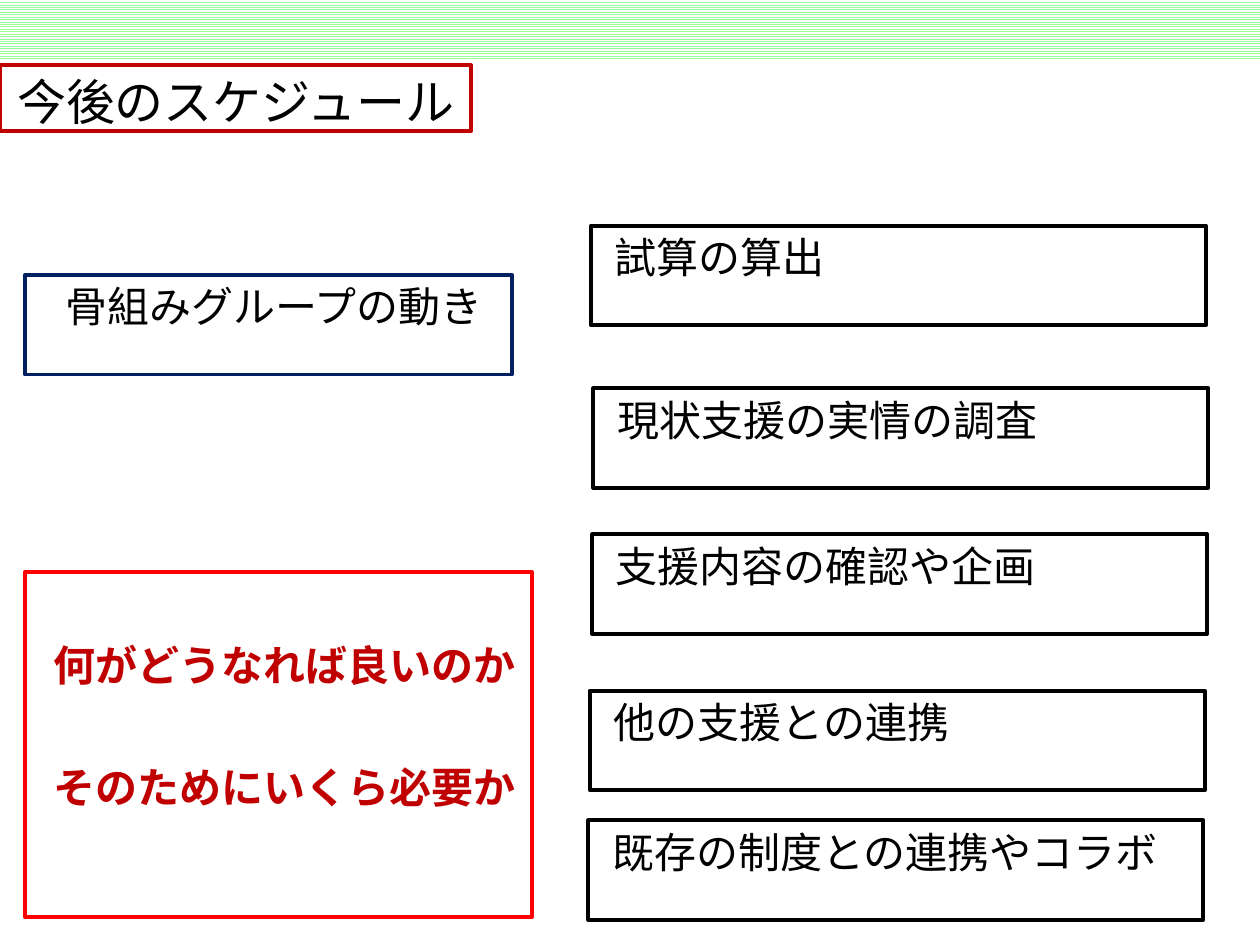
from pptx import Presentation as Deck
from pptx.dml.color import RGBColor as Rgb
from pptx.enum.dml import MSO_PATTERN as Pat
from pptx.enum.shapes import MSO_SHAPE as Kind
from pptx.enum.text import MSO_ANCHOR as Anchor, MSO_AUTO_SIZE as Fit, PP_ALIGN as Align
from pptx.util import Pt
from lxml.etree import SubElement as Sub
from pptx.oxml.ns import qn

FONT = "Calibri"
INDENT = 6.5
WIDE, HIGH = 351.4, 57

# Left and top of each task box, with its text
TASKS = [
    (337.7, 128.9, "試算の算出"),
    (339.1, 221.8, "現状支援の実情の調査"),
    (338.4, 305.3, "支援内容の確認や企画"),
    (337.0, 394.6, "他の支援との連携"),
    (336.2, 468.7, "既存の制度との連携やコラボ"),
]
GOALS = ["何がどうなれば良いのか", "そのためにいくら必要か"]


def color(code):
    return Rgb.from_string(code)


def place(shape, left, top, width, height):
    shape.left, shape.top = Pt(left), Pt(top)
    shape.width, shape.height = Pt(width), Pt(height)


def add_rect(slide, *box):
    rect = slide.shapes.add_shape(Kind.RECTANGLE, *map(Pt, box))
    rect.shadow.inherit = False
    return rect


def frame(shape, edge):
    """Outline a box and set its text at the top."""
    shape.fill.background()
    shape.line.color.rgb = color(edge)
    shape.line.width = Pt(2.25)
    text = shape.text_frame
    text.auto_size = Fit.NONE
    text.word_wrap = True
    text.vertical_anchor = Anchor.TOP
    return text


def write(par, words, size=24, ink="000000", bold=False,
          align=Align.CENTER, gap=6, indent=INDENT):
    par.alignment = align
    par.space_before = Pt(gap)
    props = par._p.get_or_add_pPr()
    props.set("marL", str(Pt(indent)))
    props.set("indent", "0")
    Sub(props, qn("a:buNone"))
    run = par.add_run()
    run.text = words
    font = run.font
    font.name, font.size, font.bold = FONT, Pt(size), bold
    font.color.rgb = color(ink)


def add_band(slide):
    band = add_rect(slide, 0, 0, 720, 34)
    band.line.fill.background()
    band.fill.patterned()
    band.fill.pattern = Pat.LIGHT_HORIZONTAL
    band.fill.fore_color.rgb = color("99FF99")
    band.fill.back_color.rgb = color("FFFFFF")


def set_title(slide):
    title = slide.shapes.title
    place(title, 0, 37.4, 269.3, 37.4)
    text = frame(title, "C00000")
    write(text.paragraphs[0], "今後のスケジュール", size=28, gap=5.6, indent=0)


def set_goals(slide):
    body = slide.placeholders[1]
    place(body, 14.4, 326.9, 289.4, 197.3)
    text = frame(body, "FF0000")
    text.margin_top = Pt(38.6)
    for num, goal in enumerate(GOALS):
        par = text.add_paragraph() if num else text.paragraphs[0]
        write(par, goal, ink="C00000", bold=True, gap=41 if num else 6)


def add_box(slide, box, edge, words, align):
    text = frame(add_rect(slide, *box), edge)
    write(text.paragraphs[0], words, align=align)


def main():
    deck = Deck()
    deck.slide_width, deck.slide_height = Pt(720), Pt(540)
    slide = deck.slides.add_slide(deck.slide_layouts[1])

    # Heading
    add_band(slide)
    set_title(slide)

    # Left side: the group and its goals
    add_box(slide, (14.4, 157, 278, HIGH), "002060",
            "骨組みグループの動き", Align.CENTER)
    set_goals(slide)

    # Right side: the tasks
    for left, top, words in TASKS:
        add_box(slide, (left, top, WIDE, HIGH), "000000", words, Align.LEFT)

    deck.save("out.pptx")


if __name__ == "__main__":
    main()
